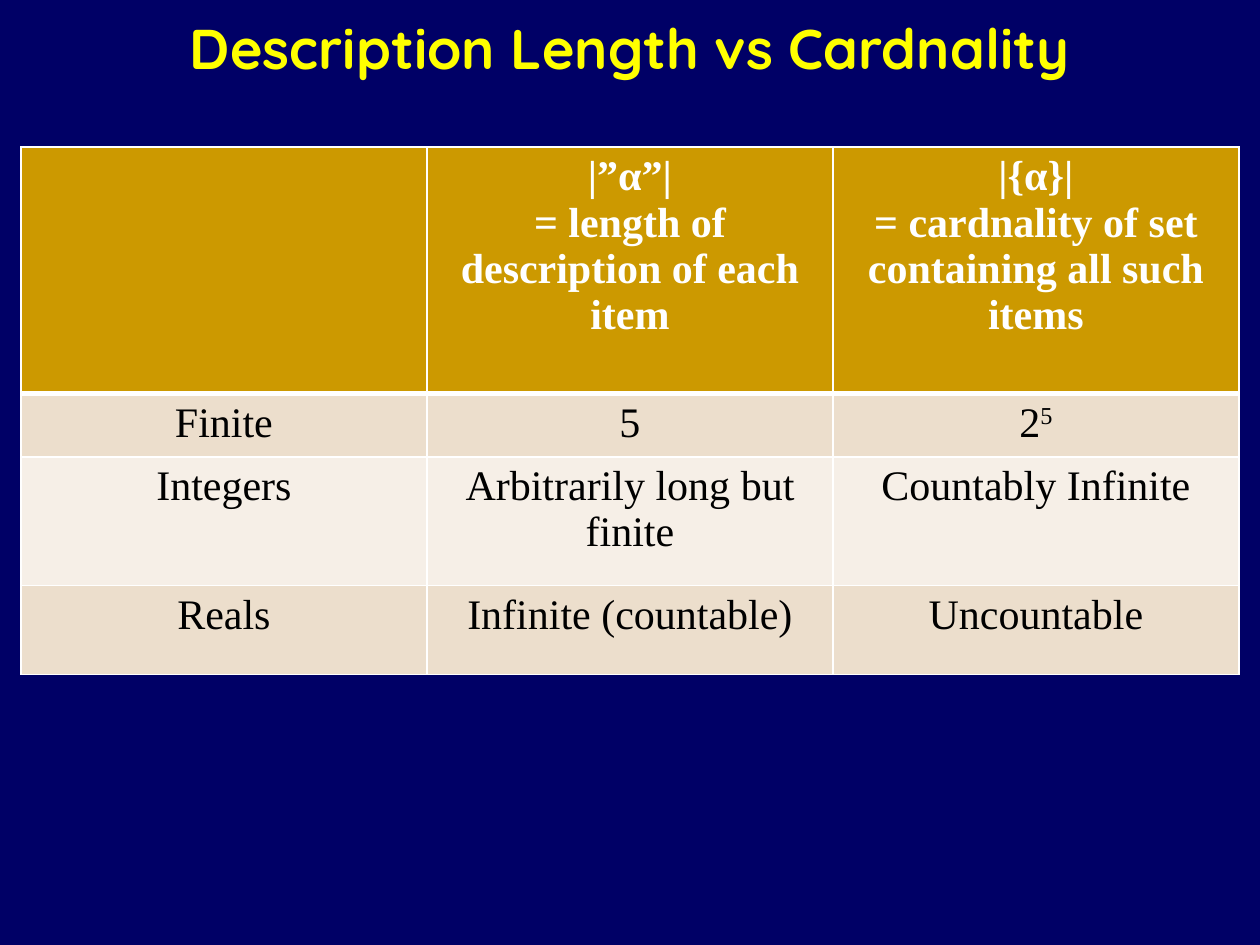
from lxml.etree import SubElement
from pptx import Presentation
from pptx.dml.color import RGBColor
from pptx.enum.text import MSO_ANCHOR, PP_ALIGN
from pptx.oxml.ns import qn
from pptx.util import Pt

NAVY = RGBColor(0x00, 0x00, 0x66)
YELLOW = RGBColor(0xFF, 0xFF, 0x00)
GOLD = RGBColor(0xCC, 0x99, 0x00)
SAND = RGBColor(0xEC, 0xDE, 0xCC)
CREAM = RGBColor(0xF6, 0xEF, 0xE7)
WHITE = RGBColor(0xFF, 0xFF, 0xFF)
BLACK = RGBColor(0x00, 0x00, 0x00)

COLUMN_WIDTH = 232
ROW_HEIGHTS = [141, 28, 73.5, 51]
# A cell is a list of text parts; every second part is superscript.
ROWS = [
    [[], ["|”α”|\n= length of description of each item"],
     ["|{α}|\n= cardnality of set containing all such items"]],
    [["Finite"], ["5"], ["2", "5"]],
    [["Integers"], ["Arbitrarily long but finite"], ["Countably Infinite"]],
    [["Reals"], ["Infinite (countable)"], ["Uncountable"]],
]


class SlideBuilder:
    title_font = "Quicksand"
    body_font = "Times New Roman"

    def __init__(self, slide):
        self.slide = slide

    def background(self, color):
        fill = self.slide.background.fill
        fill.solid()
        fill.fore_color.rgb = color

    def style(self, paragraph, font_name, size, color, bold):
        paragraph.alignment = PP_ALIGN.CENTER
        font = paragraph.font
        font.name, font.size, font.bold = font_name, Pt(size), bold
        font.color.rgb = color

    def title(self, text, left, top, width, height):
        frame = self.slide.shapes.add_textbox(
            Pt(left), Pt(top), Pt(width), Pt(height)).text_frame
        frame.word_wrap = True
        frame.vertical_anchor = MSO_ANCHOR.MIDDLE
        heading = frame.paragraphs[0]
        heading.text = text
        self.style(heading, self.title_font, 32, YELLOW, True)

    def border(self, cell, side, width):
        line = SubElement(cell._tc.get_or_add_tcPr(), qn(f"a:ln{side}"),
                          w=str(Pt(width)))
        solid = SubElement(line, qn("a:solidFill"))
        SubElement(solid, qn("a:srgbClr"), val=str(WHITE))

    def cell(self, cell, parts, row):
        header = row == 0
        # Borders come before the fill in the cell properties
        widths = {"L": 1, "R": 1, "T": 3 if row == 1 else 1, "B": 3 if header else 1}
        for side, width in widths.items():
            self.border(cell, side, width)
        cell.fill.solid()
        cell.fill.fore_color.rgb = GOLD if header else SAND if row % 2 else CREAM

        paragraph = cell.text_frame.paragraphs[0]
        self.style(paragraph, self.body_font, 24, WHITE if header else BLACK, header)
        for index, part in enumerate(parts):
            for number, text in enumerate(part.split("\n")):
                if number:
                    paragraph.add_line_break()
                run = paragraph.add_run()
                run.text = text
                if index % 2:
                    run._r.get_or_add_rPr().set("baseline", "30000")

    def table(self, rows, left, top, column_width, row_heights):
        columns = len(rows[0])
        grid = self.slide.shapes.add_table(
            len(rows), columns, Pt(left), Pt(top),
            Pt(column_width * columns), Pt(sum(row_heights))).table
        for column in grid.columns:
            column.width = Pt(column_width)
        for row, height in enumerate(row_heights):
            grid.rows[row].height = Pt(height)
            for column, parts in enumerate(rows[row]):
                self.cell(grid.cell(row, column), parts, row)


def main():
    deck = Presentation()
    deck.slide_width, deck.slide_height = Pt(720), Pt(540)
    builder = SlideBuilder(deck.slides.add_slide(deck.slide_layouts[6]))
    builder.background(NAVY)

    # Heading
    builder.title("Description Length vs Cardnality", 54, -18, 612, 90)

    # Comparison of description length and cardinality
    builder.table(ROWS, 12, 84, COLUMN_WIDTH, ROW_HEIGHTS)

    deck.save("out.pptx")


if __name__ == "__main__":
    main()
